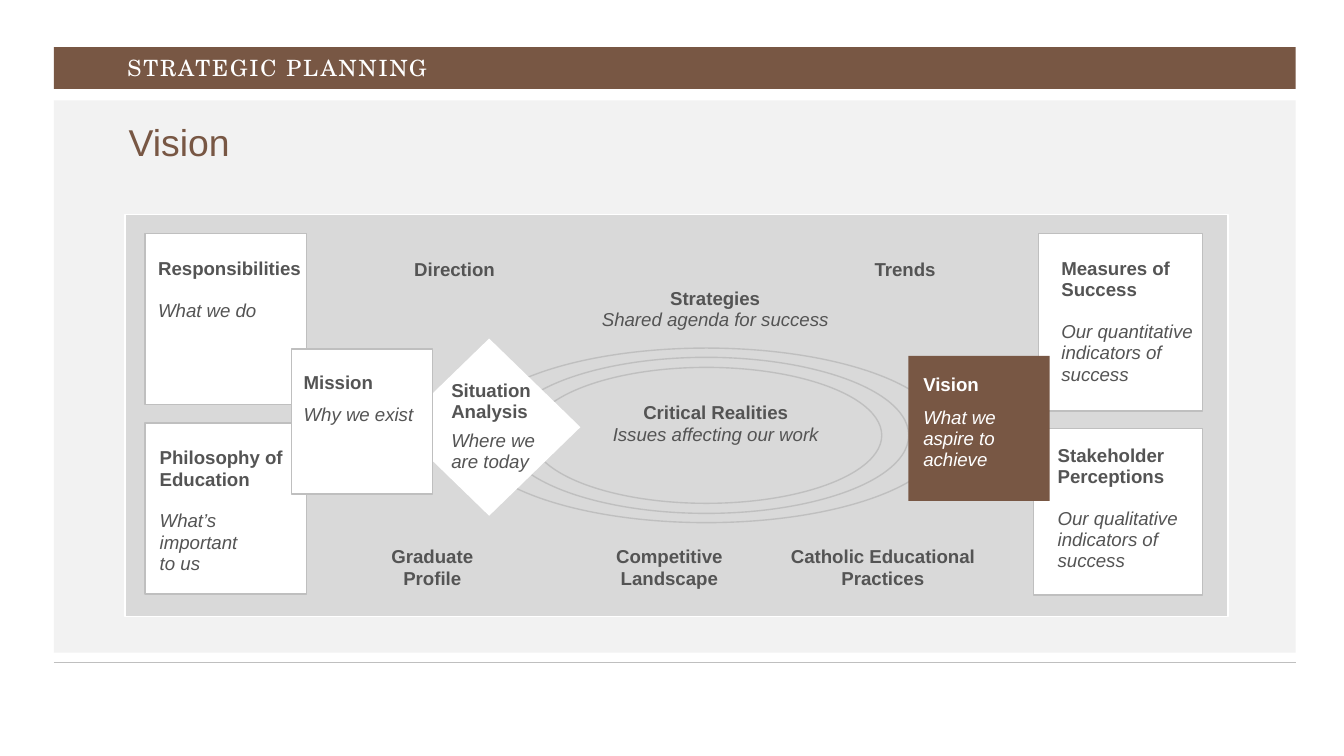
from dataclasses import dataclass

from lxml import etree
from pptx import Presentation
from pptx import util as u
from pptx.dml.color import RGBColor
from pptx.enum import shapes, text
from pptx.oxml import ns


@dataclass(frozen=True)
class Theme:
    brown: str = "785744"
    ink: str = "545454"
    white: str = "FFFFFF"
    page: str = "F2F2F2"
    panel: str = "D9D9D9"
    edge: str = "BFBFBF"
    sans: str = "Arial"
    serif: str = "TeX Gyre Schola"
    banner_size: int = 12
    heading_size: int = 20
    body_size: int = 10
    line_width: float = 0.75
    tight: float = 0.95
    heading_tight: float = 0.85


T = Theme()
RECT, DIAMOND = shapes.MSO_SHAPE.RECTANGLE, shapes.MSO_SHAPE.DIAMOND

# All positions are left, top, width, height in centimetres.
BANNER = ("STRATEGIC PLANNING", (1.02, 0.89, 23.47, 0.79), (2.16, 0.79, 9.88, 1.04))
HEADING = ("Vision", (2.18, 2.13, 10.01, 1.22))
PAGE = (1.02, 1.9, 23.47, 10.44)
PANEL = (2.36, 4.06, 20.85, 7.59)
FOOT_RULE = (1.02, 12.52, 24.49)

RING_CENTRE = (13.35, 8.23)
RING_SIZES = [(9.04, 3.3), (7.65, 2.95), (6.63, 2.57)]

# title, note, gap in points, preset, fill, edge, shape box, text box
OUTCOME_CARDS = [
    ("Measures of Success", "Our quantitative indicators of success", 11, RECT,
     T.white, T.edge, (19.63, 4.42, 3.1, 3.35), (19.81, 4.76, 3.2, 2.6)),
    ("Stakeholder Perceptions", "Our qualitative indicators of success", 11, RECT,
     T.white, T.edge, (19.53, 8.1, 3.2, 3.15), (19.74, 8.29, 3.2, 2.8)),
]
PATH_CARDS = [
    ("Vision", "What we aspire to achieve", 6, RECT,
     T.brown, None, (17.17, 6.73, 2.67, 2.74), (17.2, 6.96, 2.87, 2.18)),
    ("Situation Analysis", "Where we\nare today", 4, DIAMOND,
     T.white, None, (7.52, 6.4, 3.45, 3.35), (8.28, 7.06, 2.44, 2.44)),
    ("Responsibilities", "What we do", 11, RECT,
     T.white, T.edge, (2.74, 4.42, 3.05, 3.23), (2.74, 4.76, 3.23, 2.0)),
    ("Philosophy of Education", "What’s\nimportant\nto us", 11, RECT,
     T.white, T.edge, (2.74, 8.0, 3.05, 3.23), (2.77, 8.34, 3.2, 2.5)),
    ("Mission", "Why we exist", 6, RECT,
     T.white, T.edge, (5.51, 6.6, 2.67, 2.74), (5.49, 6.91, 2.87, 2.18)),
]
CENTRE_LABELS = [
    ("Critical Realities", "Issues affecting our work", (10.31, 7.49, 6.43, 1.75)),
    ("Strategies", "Shared agenda for success", (10.34, 5.33, 6.35, 1.5)),
    ("Direction", None, (7.14, 4.78, 2.9, 0.66)),
    ("Trends", None, (15.72, 4.78, 2.77, 0.66)),
    ("Graduate Profile", None, (6.71, 10.21, 2.92, 1.07)),
    ("Competitive Landscape", None, (10.49, 10.21, 4.32, 1.07)),
    ("Catholic Educational Practices", None, (14.6, 10.21, 4.17, 1.07)),
]


def cm(box):
    return [u.Cm(value) for value in box]


def add_block(slide, preset, box, fill=None, edge=None):
    block = slide.shapes.add_shape(preset, *cm(box))
    block.shadow.inherit = False
    if fill:
        block.fill.solid()
        block.fill.fore_color.rgb = RGBColor.from_string(fill)
    else:
        block.fill.background()
    if edge:
        block.line.color.rgb = RGBColor.from_string(edge)
        block.line.width = u.Pt(T.line_width)
    else:
        block.line.fill.background()


def add_frame(slide, box, anchor=text.MSO_ANCHOR.TOP):
    frame = slide.shapes.add_textbox(*cm(box)).text_frame
    frame.word_wrap = True
    frame.vertical_anchor = anchor
    return frame


def write(paragraph, words, color, size=T.body_size, face=T.sans, bold=False,
          italic=False, spacing=T.tight, tracking=None):
    """Fill a paragraph, one run per line; tracking is in hundredths of a point."""
    paragraph.line_spacing = spacing
    for number, line in enumerate(words.split("\n")):
        if number:
            paragraph.add_line_break()
        run = paragraph.add_run()
        run.text = line
        font = run.font
        font.name, font.size = face, u.Pt(size)
        font.bold, font.italic = bold, italic
        font.color.rgb = RGBColor.from_string(color)
        if tracking:
            run._r.get_or_add_rPr().set("spc", str(tracking))


def add_caption(slide, title, note, box, color=T.ink, gap=0, align=text.PP_ALIGN.LEFT):
    """Bold title with an optional italic note below it."""
    frame = add_frame(slide, box)
    head = frame.paragraphs[0]
    head.alignment = align
    write(head, title, color, bold=True)
    if note:
        head.space_after = u.Pt(gap)
        body = frame.add_paragraph()
        body.alignment = align
        write(body, note, color, italic=True)


def add_cards(slide, cards):
    for title, note, gap, preset, fill, edge, shape_box, text_box in cards:
        add_block(slide, preset, shape_box, fill, edge)
        color = T.white if fill == T.brown else T.ink
        add_caption(slide, title, note, text_box, color, gap)


def add_rings(slide):
    x, y = RING_CENTRE
    for width, height in RING_SIZES:
        box = (x - width / 2, y - height / 2, width, height)
        add_block(slide, shapes.MSO_SHAPE.OVAL, box, edge=T.edge)


def add_foot_rule(slide):
    left, top, right = cm(FOOT_RULE)
    rule = slide.shapes.add_connector(shapes.MSO_CONNECTOR.STRAIGHT, left, top, right, top)
    rule.line.color.rgb = RGBColor.from_string(T.edge)
    rule.line.width = u.Pt(T.line_width)
    etree.SubElement(rule._element.spPr, ns.qn("a:effectLst"))


def add_header(slide):
    banner, bar, banner_box = BANNER
    heading, heading_box = HEADING
    middle = text.MSO_ANCHOR.MIDDLE
    add_block(slide, RECT, PAGE, T.page)
    add_block(slide, RECT, bar, T.brown)
    write(add_frame(slide, banner_box, middle).paragraphs[0], banner, T.white,
          T.banner_size, T.serif, spacing=T.heading_tight, tracking=100)
    add_foot_rule(slide)
    write(add_frame(slide, heading_box, middle).paragraphs[0], heading, T.brown,
          T.heading_size, spacing=T.heading_tight)


def main():
    deck = Presentation()
    deck.slide_width, deck.slide_height = u.Cm(25.4), u.Cm(14.29)
    slide = deck.slides.add_slide(deck.slide_layouts[6])
    add_header(slide)
    add_block(slide, RECT, PANEL, T.panel, T.white)
    add_cards(slide, OUTCOME_CARDS)
    add_rings(slide)
    add_cards(slide, PATH_CARDS)
    for title, note, box in CENTRE_LABELS:
        add_caption(slide, title, note, box, align=text.PP_ALIGN.CENTER)
    deck.save("out.pptx")


if __name__ == "__main__":
    main()
